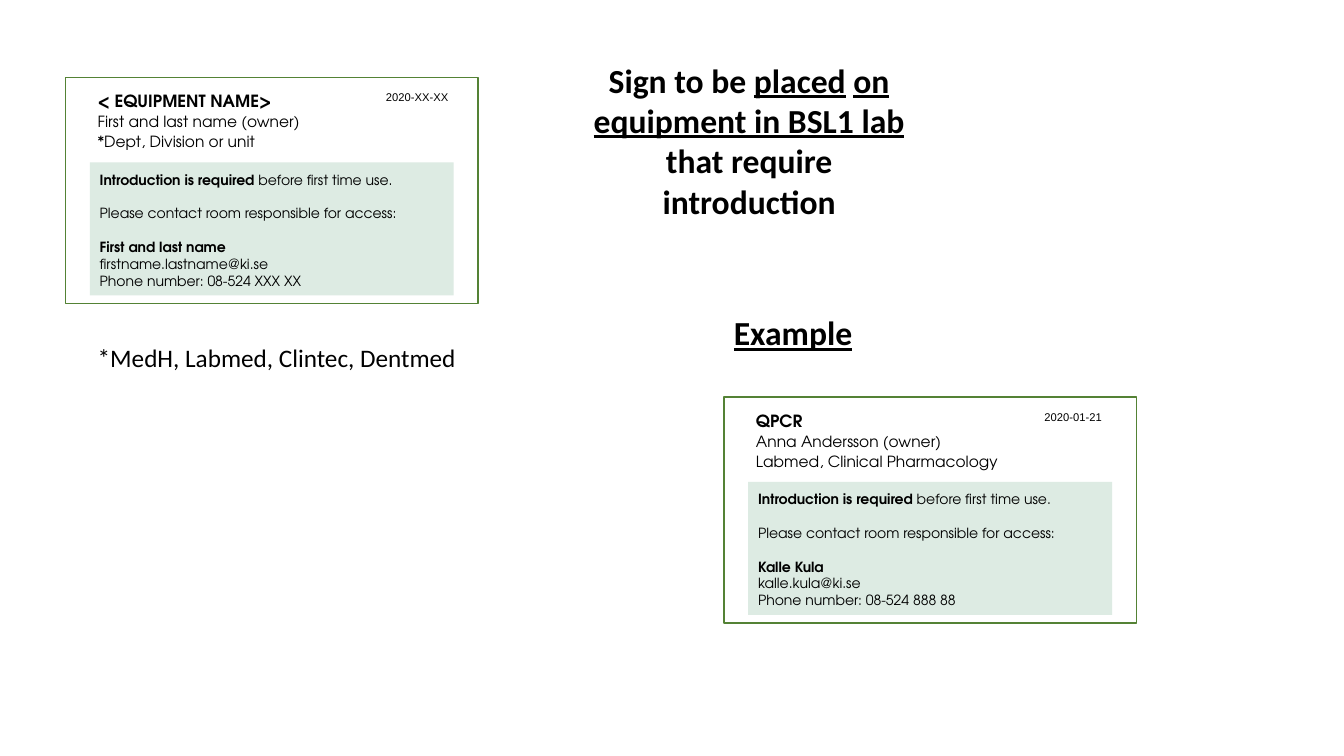
from dataclasses import dataclass

from pptx import Presentation
from pptx import util as u
from pptx.dml.color import RGBColor
from pptx.enum import shapes, text

PX = 9144  # EMU per px, 100 px to the inch


@dataclass(frozen=True)
class Theme:
    ink: str = "000000"
    paper: str = "FFFFFF"
    border: str = "548235"
    panel: str = "DDEBE3"
    main_font: str = "Calibri"
    sign_font: str = "TeX Gyre Adventor"
    date_font: str = "Arial"
    heading: int = 24
    note: int = 18
    name: int = 12
    owner: int = 11
    body: int = 10
    date: int = 8


T = Theme()


def px(*lengths):
    return [u.Emu(n * PX) for n in lengths]


def add_runs(p, pieces, font, size):
    """Each piece is (words, style); style may hold b (bold) and u (underline)."""
    for words, style in pieces:
        r = p.add_run()
        r.text = words
        r.font.name = font
        r.font.size = u.Pt(size)
        r.font.bold = "b" in style
        r.font.underline = "u" in style
        r.font.color.rgb = RGBColor.from_string(T.ink)


def add_text(s, box, lines, font, spacing=1.0):
    """Each line is (pieces, size, points before)."""
    tf = s.shapes.add_textbox(*px(*box)).text_frame
    tf.word_wrap = True
    for i, (pieces, size, before) in enumerate(lines):
        p = tf.paragraphs[0] if i == 0 else tf.add_paragraph()
        p.line_spacing = spacing
        p.space_before = u.Pt(before)
        add_runs(p, pieces, font, size)


def add_rect(s, box, fill, line=None):
    sp = s.shapes.add_shape(shapes.MSO_SHAPE.RECTANGLE, *px(*box))
    sp.shadow.inherit = False
    sp.fill.solid()
    sp.fill.fore_color.rgb = RGBColor.from_string(fill)
    if line:
        sp.line.color.rgb = RGBColor.from_string(line)
        sp.line.width = u.Pt(1)
    else:
        sp.line.fill.background()


def set_title(s, box, pieces):
    title = s.shapes.title
    title.left, title.top, title.width, title.height = px(*box)
    tf = title.text_frame
    tf.word_wrap = True
    tf.auto_size = text.MSO_AUTO_SIZE.NONE
    tf.vertical_anchor = text.MSO_ANCHOR.TOP
    p = tf.paragraphs[0]
    p.alignment = text.PP_ALIGN.CENTER
    add_runs(p, pieces, T.main_font, T.heading)


def add_sign(s, x, y, equipment, owner, unit, date, contact, email, phone):
    # Frame and tinted panel
    add_rect(s, (x, y, 409, 224), T.paper, T.border)
    add_rect(s, (x + 24, y + 84, 361, 132), T.panel)

    # Equipment and owner
    add_text(s, (x + 22, y + 7, 270, 70), [
        ([(equipment, "b")], T.name, 0),
        ([(owner, "")], T.owner, 0),
        ([(unit, "")], T.owner, 0),
    ], T.sign_font, 1.07)

    # Access instructions
    add_text(s, (x + 24, y + 88, 359, 128), [
        ([("Introduction is required ", "b"), ("before first time use.", "")], T.body, 0),
        ([("Please contact room responsible for access:", "")], T.body, 12),
        ([(contact, "b")], T.body, 12),
        ([(email, "")], T.body, 0),
        ([("Phone number: " + phone, "")], T.body, 0),
    ], T.sign_font)

    # Date
    add_text(s, (x + 308, y + 7, 89, 24), [([(date, "")], T.date, 0)], T.date_font, 1.07)


def main():
    prs = Presentation()
    prs.slide_width, prs.slide_height = px(1333, 750)
    s = prs.slides.add_slide(prs.slide_layouts[5])

    # Headings
    set_title(s, (570, 54, 346, 172), [
        ("Sign to be ", "b"), ("placed", "bu"), (" ", "b"), ("on", "bu"), (" ", "b"),
        ("equipment in BSL1 lab ", "bu"), ("that require introduction", "b"),
    ])
    add_text(s, (718, 305, 346, 50), [([("Example", "bu")], T.heading, 0)], T.main_font)

    # Template sign and filled-in example
    add_sign(s, 65, 77, "< EQUIPMENT NAME>", "First and last name (owner)",
             "*Dept, Division or unit", "2020-XX-XX",
             "First and last name", "firstname.lastname@ki.se", "08-524 XXX XX")
    add_sign(s, 718, 394, "QPCR", "Anna Andersson (owner)",
             "Labmed, Clinical Pharmacology", "2020-01-21",
             "Kalle Kula", "kalle.kula@ki.se", "08-524 888 88")

    # Footnote on departments
    add_text(s, (87, 335, 395, 40),
             [([("*MedH, Labmed, Clintec, Dentmed", "")], T.note, 0)], T.main_font)

    prs.save("out.pptx")


if __name__ == "__main__":
    main()
